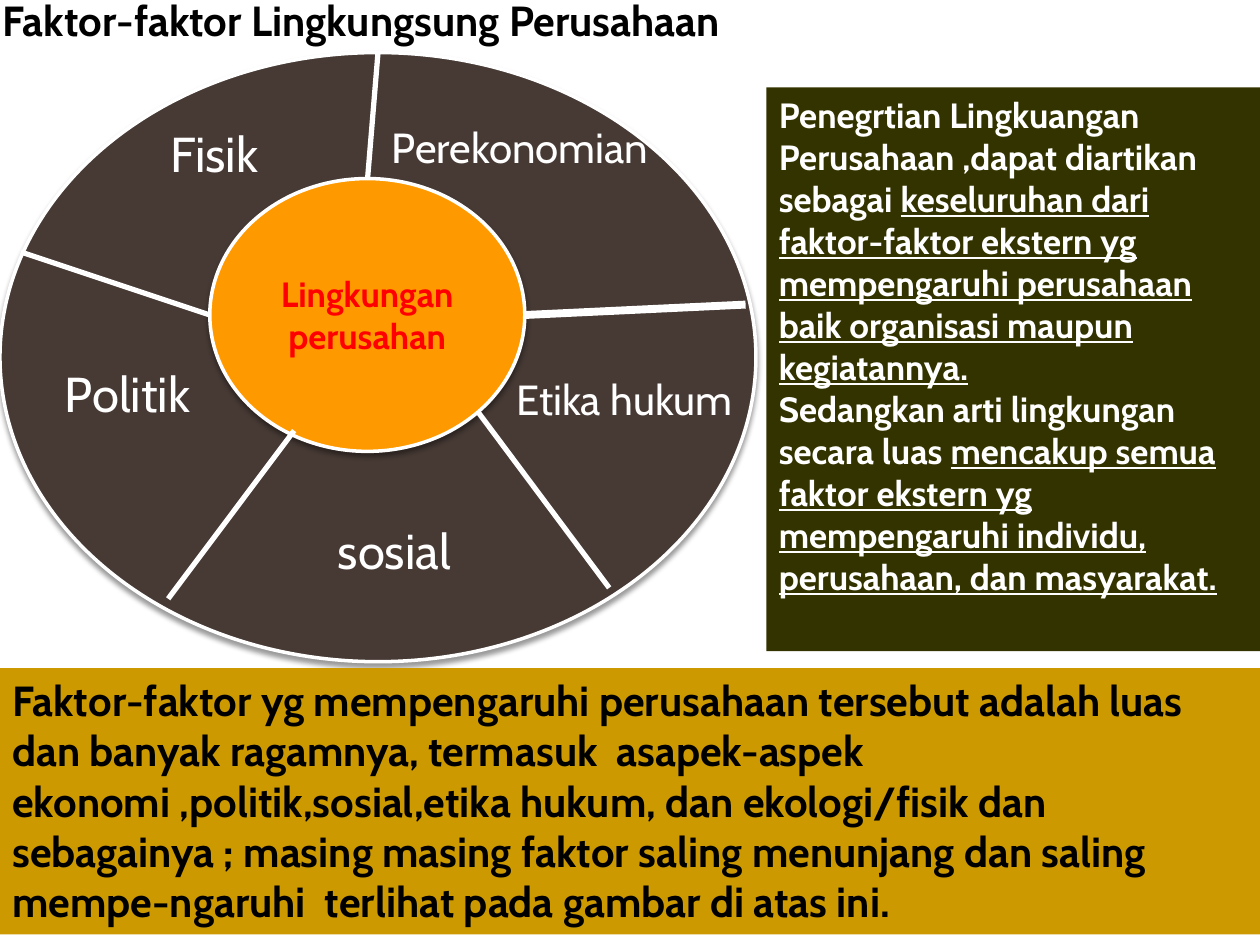
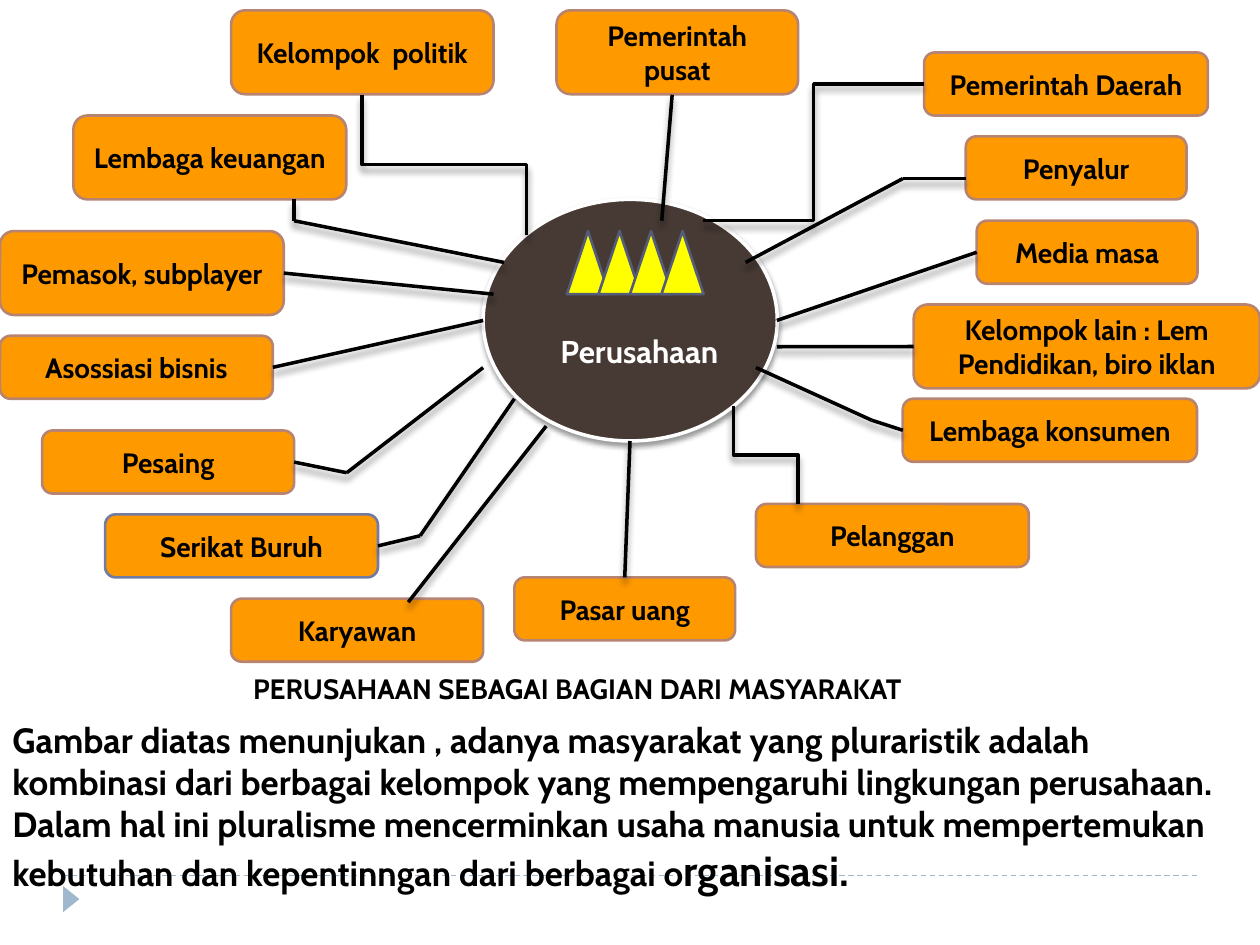
from dataclasses import dataclass
from itertools import pairwise

from lxml.etree import SubElement
from pptx import Presentation
from pptx.dml.color import RGBColor
from pptx.enum.dml import MSO_LINE
from pptx.enum.shapes import MSO_CONNECTOR, MSO_SHAPE
from pptx.enum.text import MSO_ANCHOR, PP_ALIGN
from pptx.oxml.ns import qn
from pptx.util import Cm, Pt

FONT = "Cabin"
COLORS = {
    "white": "FFFFFF", "black": "000000", "red": "FF0000", "brown": "473A35",
    "orange": "FF9900", "gold": "CC9900", "olive": "333300", "yellow": "FFFF00",
    "rose": "B88472", "slate": "727CA3", "navy": "545C79", "mist": "9FB8CD",
}
TOP, LEFT, BOTTOM, RIGHT = range(4)


@dataclass(frozen=True)
class Span:
    text: str
    underline: bool = False
    size: float | None = None


@dataclass(frozen=True)
class Shadow:
    """Black shadow falling straight down, in points."""
    blur: float
    distance: float


@dataclass(frozen=True)
class Label:
    text: str
    left: float
    top: float
    width: float
    size: float = 28
    align: PP_ALIGN = PP_ALIGN.LEFT


@dataclass(frozen=True)
class Divider:
    start: tuple[float, float]
    end: tuple[float, float]
    weight: float = 3


@dataclass(frozen=True)
class Group:
    name: str
    left: float
    top: float
    width: float
    height: float = 1.27
    edge: str = "rose"


@dataclass(frozen=True)
class Route:
    """Straight pieces through the points, then on to a side of a group's box."""
    points: tuple[tuple[float, float], ...]
    group: str = ""
    side: int = LEFT


DISC_SHADOW = Shadow(3, 2)
LINE_SHADOW = Shadow(4, 3.4)

FACTORS = [
    Label("sosial", 6.56, 10.37, 3.39),
    Label("Etika hukum", 10.16, 7.41, 6.15, 24),
    Label("Perekonomian", 6.99, 2.33, 6.99, 24, PP_ALIGN.CENTER),
    Label("Fisik", 3.18, 2.37, 2.54),
    Label("Politik", 1.06, 7.21, 3.61),
]
DIVIDERS = [
    Divider((7.41, 3.6), (7.62, 1.06)),
    Divider((4.23, 6.35), (0.42, 5.08)),
    Divider((10.58, 6.35), (15.03, 6.14), 4.5),
    Divider((12.28, 11.85), (9.64, 8.31)),
    Divider((5.93, 8.68), (3.39, 12.07)),
]
GROUPS = [
    Group("Pemerintah pusat", 11.22, 0.21, 4.87, 1.69),
    Group("Pemerintah Daerah", 18.63, 1.06, 5.72),
    Group("Lembaga konsumen", 18.2, 8.04, 5.93),
    Group("Pelanggan", 15.24, 10.16, 5.5),
    Group("Pasar uang", 10.37, 11.64, 4.45),
    Group("Media masa", 19.69, 4.45, 4.45),
    Group("Penyalur", 19.47, 2.75, 4.45),
    Group("Kelompok lain : Lem Pendidikan, biro iklan", 18.42, 6.14, 6.98, 1.69),
    Group("Karyawan", 4.66, 12.07, 5.08),
    Group("Serikat Buruh", 2.12, 10.37, 5.5, edge="slate"),
    Group("Pesaing", 0.85, 8.68, 5.08),
    Group("Asossiasi bisnis", 0, 6.77, 5.5),
    Group("Pemasok, subplayer", 0, 4.66, 5.72, 1.69),
    Group("Lembaga keuangan", 1.48, 2.33, 5.5, 1.69),
    Group("Kelompok  politik", 4.66, 0.21, 5.29, 1.69),
]
ROUTES = [
    Route(((13.34, 4.45), (13.55, 1.91))),
    Route(((12.7, 8.89),), "Pasar uang", TOP),
    Route(((11.01, 8.59), (8.23, 12.14))),
    Route(((10.37, 8.04), (8.47, 10.8)), "Serikat Buruh", RIGHT),
    Route(((9.74, 7.41), (6.99, 9.53)), "Pesaing", RIGHT),
    Route(((9.74, 6.46),), "Asossiasi bisnis", RIGHT),
    Route(((9.95, 5.93),), "Pemasok, subplayer", RIGHT),
    Route(((10.16, 5.29), (5.93, 4.45), (5.93, 4.02))),
    Route(((15.03, 5.29), (18.2, 3.6), (19.47, 3.6))),
    Route(((15.66, 6.46),), "Media masa"),
    Route(((15.24, 7.41), (17.57, 8.47)), "Lembaga konsumen"),
    Route(((15.66, 6.99),), "Kelompok lain : Lem Pendidikan, biro iklan"),
]


def color(name: str) -> RGBColor:
    return RGBColor.from_string(COLORS[name])


def set_shadow(shape, shadow: Shadow | None) -> None:
    """Replace the theme's shadow; call it after the line has been set."""
    effects = SubElement(shape.element.spPr, qn("a:effectLst"))
    if shadow:
        outer = SubElement(effects, qn("a:outerShdw"), blurRad=str(Pt(shadow.blur)),
                           dist=str(Pt(shadow.distance)), dir="5400000", rotWithShape="0")
        black = SubElement(outer, qn("a:srgbClr"), val=COLORS["black"])
        SubElement(black, qn("a:alpha"), val="40000")


def write(shape, *paragraphs: str | list[Span], size: float, ink: str = "black",
          bold: bool = True, align=PP_ALIGN.LEFT, anchor=MSO_ANCHOR.TOP) -> None:
    frame = shape.text_frame
    frame.word_wrap = True
    frame.vertical_anchor = anchor
    for number, content in enumerate(paragraphs):
        para = frame.add_paragraph() if number else frame.paragraphs[0]
        para.alignment = align
        spans = [Span(content)] if isinstance(content, str) else content
        for span in spans:
            run = para.add_run()
            run.text = span.text
            run.font.name = FONT
            run.font.size = Pt(span.size or size)
            run.font.bold = bold
            run.font.color.rgb = color(ink)
            if span.underline:
                run.font.underline = True


def add_box(page, kind, left: float, top: float, width: float, height: float, *,
            fill: str, edge: str | None = None, weight: float = 1.5,
            shadow: Shadow | None = None):
    box = page.shapes.add_shape(kind, Cm(left), Cm(top), Cm(width), Cm(height))
    box.fill.solid()
    box.fill.fore_color.rgb = color(fill)
    if edge:
        box.line.color.rgb = color(edge)
        box.line.width = Pt(weight)
    else:
        box.line.fill.background()
    set_shadow(box, shadow)
    return box


def add_text(page, left: float, top: float, width: float, height: float, *paragraphs,
             **style) -> None:
    box = page.shapes.add_textbox(Cm(left), Cm(top), Cm(width), Cm(height))
    write(box, *paragraphs, **style)


def add_line(page, start: tuple[float, float], end: tuple[float, float], *,
             ink: str = "black", weight: float = 2, shadow: Shadow | None = None,
             kind=MSO_CONNECTOR.STRAIGHT):
    line = page.shapes.add_connector(kind, *(Cm(value) for value in (*start, *end)))
    line.line.color.rgb = color(ink)
    line.line.width = Pt(weight)
    set_shadow(line, shadow)
    return line


def add_drop(page, start: tuple[float, float], end: tuple[float, float]) -> None:
    """Elbow that leaves downwards, turns right, and arrives downwards."""
    (left, top), (right, bottom) = start, end
    middle_x, middle_y = (left + right) / 2, (top + bottom) / 2
    half_x, half_y = (bottom - top) / 2, (right - left) / 2
    line = add_line(page, (middle_x + half_x, middle_y - half_y),
                    (middle_x - half_x, middle_y + half_y),
                    shadow=LINE_SHADOW, kind=MSO_CONNECTOR.ELBOW)
    line.rotation = 270


def draw_factors(page) -> None:
    disc = dict(edge="white", weight=2, shadow=DISC_SHADOW)
    add_box(page, MSO_SHAPE.OVAL, 0, 1.06, 15.24, 12.28, fill="brown", **disc)
    core = add_box(page, MSO_SHAPE.OVAL, 4.23, 3.6, 6.35, 5.5, fill="orange", **disc)
    write(core, "Lingkungan perusahan", size=20, ink="red",
          align=PP_ALIGN.CENTER, anchor=MSO_ANCHOR.MIDDLE)
    for divider in DIVIDERS:
        add_line(page, divider.start, divider.end, ink="white", weight=divider.weight)
    for label in FACTORS:
        add_text(page, label.left, label.top, label.width, 1.4, label.text,
                 size=label.size, ink="white", bold=False, align=label.align)
    add_text(page, -0.2, -0.23, 16.51, 1.27, "Faktor-faktor Lingkungsung Perusahaan", size=24)

    summary = add_box(page, MSO_SHAPE.RECTANGLE, 0, 13.47, 25.4, 5.37, fill="gold")
    write(summary,
          "Faktor-faktor yg mempengaruhi perusahaan tersebut adalah luas dan banyak "
          "ragamnya, termasuk  asapek-aspek  ekonomi ,politik,sosial,etika hukum, dan "
          "ekologi/fisik dan sebagainya ; masing masing faktor saling menunjang dan "
          "saling mempe-ngaruhi  terlihat pada gambar di atas ini.", size=24)
    definition = add_box(page, MSO_SHAPE.RECTANGLE, 15.45, 1.76, 9.95, 11.37, fill="olive")
    write(definition,
          [Span("Penegrtian Lingkuangan Perusahaan ,dapat diartikan sebagai "),
           Span("keseluruhan dari faktor-faktor ekstern yg mempengaruhi perusahaan "
                "baik organisasi maupun kegiatannya.", underline=True)],
          [Span("Sedangkan arti lingkungan secara luas "),
           Span("mencakup semua faktor ekstern yg mempengaruhi individu, perusahaan, "
                "dan masyarakat.", underline=True)],
          size=20, ink="white")


def draw_footer(page) -> None:
    rule = add_line(page, (1.27, 17.65), (24.13, 17.65), ink="mist", weight=0.75)
    rule.line.dash_style = MSO_LINE.DASH
    marker = add_box(page, MSO_SHAPE.ISOSCELES_TRIANGLE, 1.17, 17.96, 0.53, 0.33, fill="mist")
    marker.rotation = 90


def draw_society(page) -> None:
    centered = dict(align=PP_ALIGN.CENTER, anchor=MSO_ANCHOR.MIDDLE)
    draw_footer(page)
    company = add_box(page, MSO_SHAPE.OVAL, 9.74, 4.02, 5.93, 4.87, fill="brown",
                      edge="white", weight=2, shadow=DISC_SHADOW)
    write(company, "Perusahaan", size=18, ink="white", anchor=MSO_ANCHOR.MIDDLE)
    company.text_frame.margin_left = Cm(0.69)
    company.text_frame.margin_top = Cm(1.35)
    for number in range(4):
        add_box(page, MSO_SHAPE.FLOWCHART_EXTRACT, 11.43 + number * 0.635, 4.66, 0.85, 1.27,
                fill="yellow", edge="navy")

    boxes = {}
    for group in GROUPS:
        box = add_box(page, MSO_SHAPE.ROUNDED_RECTANGLE, group.left, group.top,
                      group.width, group.height, fill="orange", edge=group.edge)
        write(box, group.name, size=16, **centered)
        boxes[group.name] = box

    for route in ROUTES:
        for start, end in pairwise(route.points):
            add_line(page, start, end, shadow=LINE_SHADOW)
        if route.group:
            last = route.points[-1]
            line = add_line(page, last, last, shadow=LINE_SHADOW)
            line.end_connect(boxes[route.group], route.side)
    add_line(page, (18.63, 1.69), (14.18, 4.45), shadow=LINE_SHADOW, kind=MSO_CONNECTOR.ELBOW)
    add_drop(page, (7.3, 1.91), (10.61, 4.73))
    add_drop(page, (14.79, 8.18), (16.09, 10.16))

    heading = add_box(page, MSO_SHAPE.ROUNDED_RECTANGLE, 2.75, 13.55, 17.78, 0.64, fill="white")
    write(heading, "PERUSAHAAN SEBAGAI BAGIAN DARI MASYARAKAT", size=16, **centered)
    add_text(page, 0, 14.35, 25.4, 3.84,
             [Span("Gambar diatas menunjukan , adanya masyarakat yang pluraristik adalah "
                   "kombinasi dari berbagai kelompok yang mempengaruhi lingkungan "
                   "perusahaan. Dalam hal ini pluralisme mencerminkan usaha manusia untuk "
                   "mempertemukan kebutuhan dan kepentinngan dari berbagai o"),
              Span("rganisasi.", size=24)], size=20)


def main() -> None:
    deck = Presentation()
    deck.slide_width, deck.slide_height = Cm(25.4), Cm(19.05)
    blank = deck.slide_layouts[6]
    for draw in (draw_factors, draw_society):
        draw(deck.slides.add_slide(blank))
    deck.save("out.pptx")


if __name__ == "__main__":
    main()
